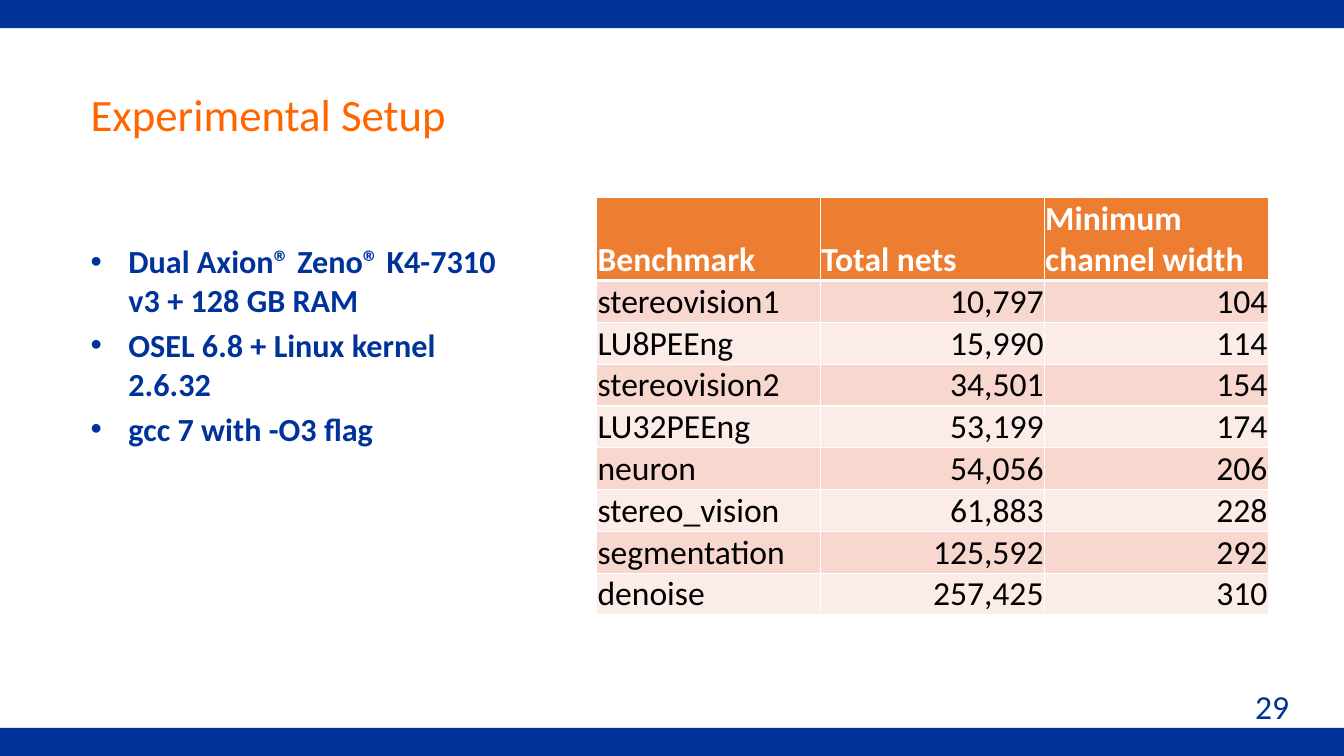
"""Build the slide on the experimental setup, with its list and benchmark table."""

import dataclasses
import typing

import lxml.etree
import pptx
import pptx.dml.color
import pptx.enum.shapes
import pptx.enum.text
import pptx.oxml.ns
import pptx.util

Cm = pptx.util.Cm
Align = pptx.enum.text.PP_ALIGN
Anchor = pptx.enum.text.MSO_ANCHOR


@dataclasses.dataclass(frozen=True)
class Theme:
    """Colours, font and type sizes of the slide."""

    face: str = "Calibri"
    blue: str = "003399"
    orange: str = "FF6600"
    white: str = "FFFFFF"
    black: str = "000000"
    head: str = "ED7D31"
    bands: tuple[str, str] = ("F8D7CE", "FCECE8")
    title: int = 32
    list: int = 23
    text: int = 24


@dataclasses.dataclass(frozen=True)
class Box:
    """A place on the slide, in centimetres."""

    left: float
    top: float
    width: float
    height: float

    def lengths(self) -> tuple[Cm, Cm, Cm, Cm]:
        """Give left, top, width and height as lengths."""
        return Cm(self.left), Cm(self.top), Cm(self.width), Cm(self.height)


class Bench(typing.NamedTuple):
    """One row of the benchmark table."""

    name: str
    nets: str
    width: str


THEME = Theme()
WIDTH, HEIGHT, BAR = 33.87, 19.05, 0.71
BARS = [Box(0, top, WIDTH, BAR) for top in (HEIGHT - BAR, 0)]
TITLE = Box(2.03, 1.27, 24.16, 3.18)
BODY = Box(2.03, 4.24, 11.3, 8.89)
NUMBER = Box(25.68, 17.15, 7.06, 1.27)
GRID = Box(15.04, 4.98, 16.92, 10.39)
HEAD_ROW, ROW = 2.07, 1.04

POINTS = [
    "Dual Axion® Zeno® K4-7310 v3 + 128 GB RAM",
    "OSEL 6.8 + Linux kernel 2.6.32",
    "gcc 7 with -O3 flag",
]
ROWS = [
    Bench("Benchmark", "Total nets", "Minimum \nchannel width"),
    Bench("stereovision1", "10,797", "104"),
    Bench("LU8PEEng", "15,990", "114"),
    Bench("stereovision2", "34,501", "154"),
    Bench("LU32PEEng", "53,199", "174"),
    Bench("neuron", "54,056", "206"),
    Bench("stereo_vision", "61,883", "228"),
    Bench("segmentation", "125,592", "292"),
    Bench("denoise", "257,425", "310"),
]


def tint(code: str) -> pptx.dml.color.RGBColor:
    """Turn a hex code into a colour."""
    return pptx.dml.color.RGBColor.from_string(code)


def write(par, text: str, size: int, colour: str, bold: bool = False, align=Align.LEFT) -> None:
    """Add text to a paragraph, one run to each line."""
    par.alignment = align
    for index, line in enumerate(text.split("\n")):
        if index:
            par.add_line_break()
        run = par.add_run()
        run.text = line
        run.font.name = THEME.face
        run.font.size = pptx.util.Pt(size)
        run.font.bold = bold
        run.font.color.rgb = tint(colour)


def place(shape, box: Box, anchor=Anchor.MIDDLE):
    """Move a text shape to its box and return its text frame."""
    shape.left, shape.top, shape.width, shape.height = box.lengths()
    frame = shape.text_frame
    frame.word_wrap = True
    frame.auto_size = pptx.enum.text.MSO_AUTO_SIZE.NONE
    frame.vertical_anchor = anchor
    return frame


def draw_bar(slide, box: Box) -> None:
    """Draw a solid bar across the slide."""
    bar = slide.shapes.add_shape(pptx.enum.shapes.MSO_SHAPE.RECTANGLE, *box.lengths())
    bar.shadow.inherit = False
    bar.fill.solid()
    bar.fill.fore_color.rgb = tint(THEME.blue)
    bar.line.fill.background()


def edge(cell, side: str, weight: int) -> None:
    """Draw a white border on one side of a cell."""
    name = pptx.oxml.ns.qn
    props = cell._tc.get_or_add_tcPr()
    line = lxml.etree.SubElement(props, name(f"a:ln{side}"), w=str(pptx.util.Pt(weight)))
    fill = lxml.etree.SubElement(line, name("a:solidFill"))
    lxml.etree.SubElement(fill, name("a:srgbClr"), val=THEME.white)


def fill_cell(cell, text: str, row: int, col: int) -> None:
    """Format one table cell and write its text."""
    head = row == 0
    weights = {"L": 1, "R": 1, "T": 3 if row == 1 else 1, "B": 3 if head else 1}
    for side, weight in weights.items():
        edge(cell, side, weight)
    cell.fill.solid()
    cell.fill.fore_color.rgb = tint(THEME.head if head else THEME.bands[(row - 1) % 2])
    cell.margin_left = cell.margin_right = cell.margin_top = Cm(0.02)
    cell.margin_bottom = 0
    cell.vertical_anchor = Anchor.BOTTOM
    colour = THEME.white if head else THEME.black
    align = Align.LEFT if head or col == 0 else Align.RIGHT
    write(cell.text_frame.paragraphs[0], text, THEME.text, colour, head, align)


def draw_grid(slide, rows: list[Bench], box: Box) -> None:
    """Draw the benchmark table."""
    count = len(Bench._fields)
    table = slide.shapes.add_table(len(rows), count, *box.lengths()).table
    for col in table.columns:
        col.width = Cm(box.width / count)
    for row, bench in enumerate(rows):
        table.rows[row].height = Cm(ROW if row else HEAD_ROW)
        for col, text in enumerate(bench):
            fill_cell(table.cell(row, col), text, row, col)


def main() -> None:
    """Build and save the slide."""
    deck = pptx.Presentation()
    deck.slide_width, deck.slide_height = Cm(WIDTH), Cm(HEIGHT)
    slide = deck.slides.add_slide(deck.slide_layouts[1])
    for bar in BARS:
        draw_bar(slide, bar)

    title = place(slide.shapes.title, TITLE)
    write(title.paragraphs[0], "Experimental Setup", THEME.title, THEME.orange)

    body = place(slide.placeholders[1], BODY)
    for index, point in enumerate(POINTS):
        par = body.add_paragraph() if index else body.paragraphs[0]
        if index == 0:
            par.space_before = 0
        write(par, point, THEME.list, THEME.blue, bold=True)

    number = place(slide.shapes.add_textbox(*NUMBER.lengths()), NUMBER, Anchor.TOP)
    write(number.paragraphs[0], "29", THEME.text, THEME.blue, align=Align.RIGHT)
    draw_grid(slide, ROWS, GRID)
    deck.save("out.pptx")


if __name__ == "__main__":
    main()
